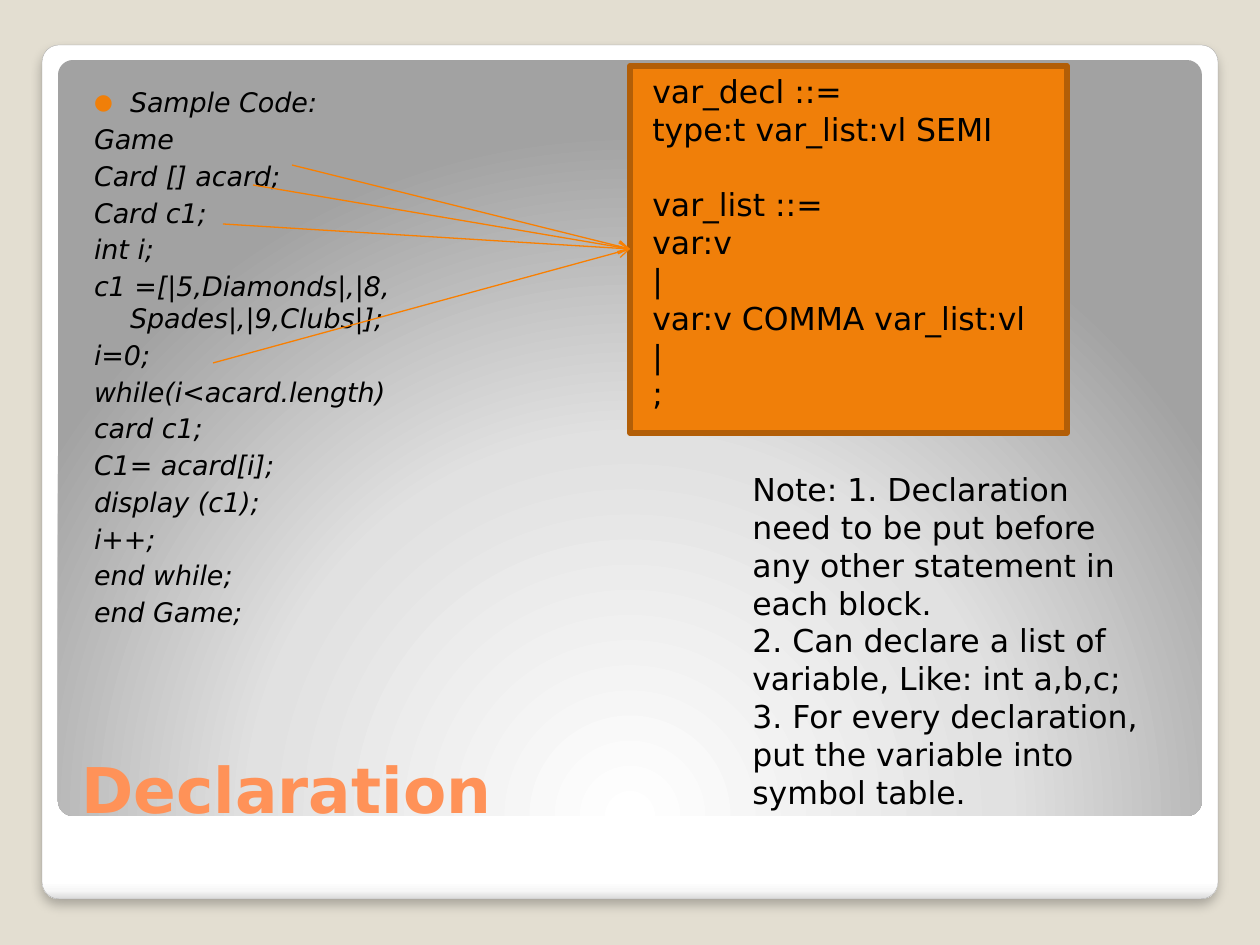
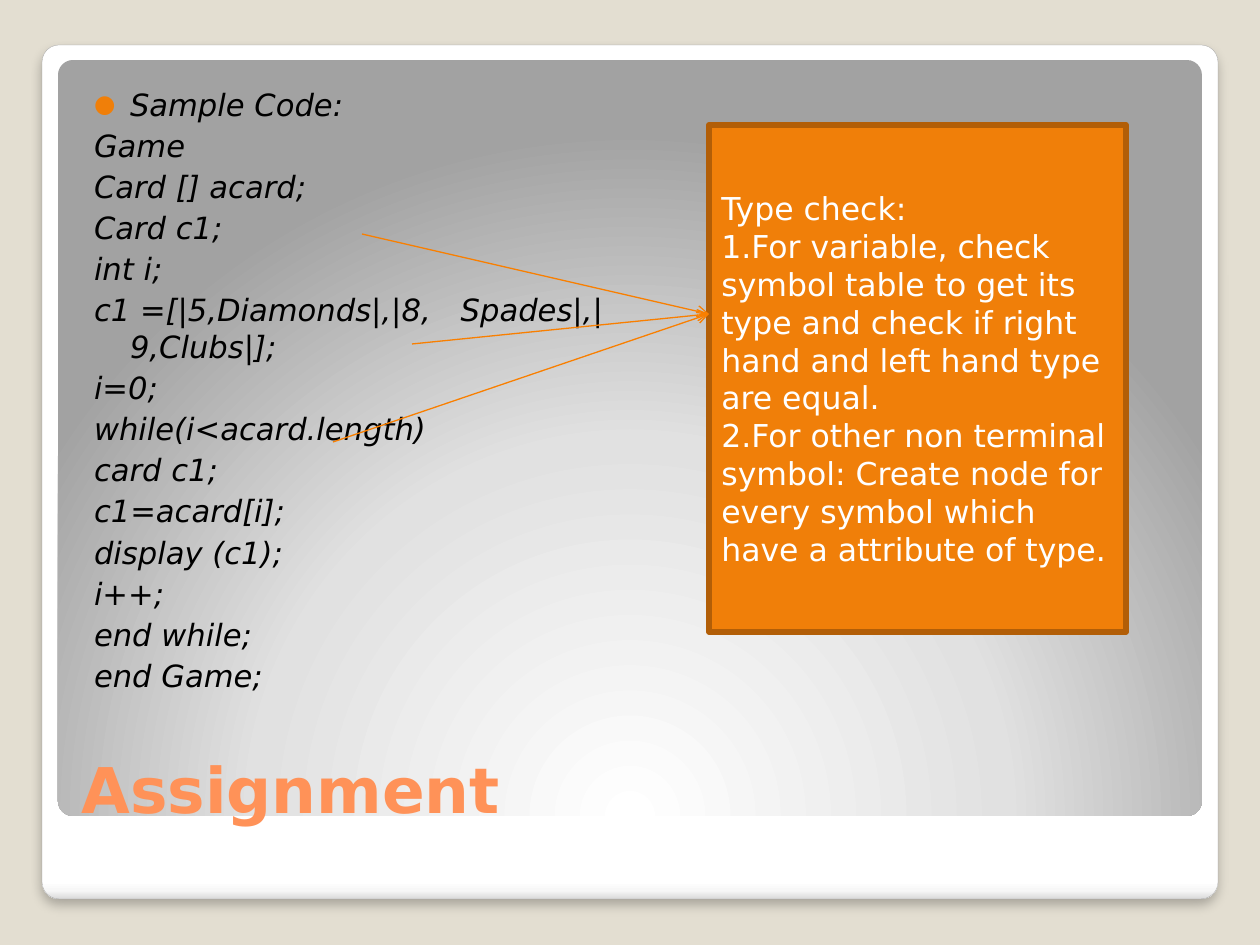
import pptx
import pptx.dml.color
import pptx.enum.shapes
import pptx.enum.text
import pptx.oxml
import pptx.oxml.ns
import pptx.util

EMU_PER_PX = 914400 / 126
FONT = "DejaVu Sans"
COLORS = {
    "background": "E3DED1",
    "plate_edge": "A4A4A4",
    "title": "FF9258",
    "text": "000000",
    "light_text": "FFFFFF",
    "box": "F07F09",
    "box_edge": "B25E07",
    "arrow": "F97F00",
}
PLATE_STOPS = [(0, "FFFFFF"), (98, "FFFFFF"), (99, "F7F7F7"), (100, "DADADA")]
PANEL_STOPS = [(0, "FFFFFF"), (55, "E1E1E1"), (100, "A2A2A2")]
DOWNWARD = '<a:lin ang="5400000" scaled="0"/>'
FROM_BELOW = ('<a:path path="circle">'
              '<a:fillToRect l="50000" t="175000" r="50000" b="-75000"/></a:path>')
SHADOW = ('<a:outerShdw {ns} blurRad="76200" dist="50800" dir="5400000" algn="tl" '
          'rotWithShape="0"><a:srgbClr val="000000"><a:alpha val="25000"/></a:srgbClr>'
          '</a:outerShdw>')
BULLET = ('<a:buClr {ns}><a:srgbClr val="' + COLORS["box"] + '"/></a:buClr>',
          '<a:buSzPct {ns} val="80000"/>',
          '<a:buFont {ns} typeface="' + FONT + '"/>',
          '<a:buChar {ns} char="●"/>')
NO_BULLET = ('<a:buNone {ns}/>',)

WIDE_GAP_AFTER = "|8,"
CODE_START = ["Sample Code:", "Game", "Card [] acard;", "Card c1;", "int i;",
              "c1 =[|5,Diamonds|,|8, Spades|,|9,Clubs|];", "i=0;",
              "while(i<acard.length)", "card c1;"]
CODE_END = ["display (c1);", "i++;", "end while;", "end Game;"]
GRAMMAR = ["var_decl ::=", "type:t var_list:vl SEMI", "var_list ::=", "var:v", "|",
           "var:v COMMA var_list:vl", "|", ";"]
NOTES = ["Note: 1. Declaration need to be put before any other statement in each block.",
         "2. Can declare a list of variable, Like: int a,b,c;",
         "3. For every declaration, put the variable into symbol table."]
TYPE_CHECK = ["Type check:",
              "1.For variable, check symbol table to get its type and check if right "
              "hand and left hand type are equal.",
              "2.For other non terminal symbol: Create node for every symbol which have "
              "a attribute of type."]


def px(length):
    return pptx.util.Emu(round(length * EMU_PER_PX))


def rgb(name):
    return pptx.dml.color.RGBColor.from_string(COLORS[name])


def xml(template):
    return pptx.oxml.parse_xml(template.format(ns=pptx.oxml.ns.nsdecls("a")))


def child(parent, tag):
    return parent.find(pptx.oxml.ns.qn(tag))


class Deck:
    def __init__(self):
        self.presentation = pptx.Presentation()
        self.presentation.slide_width = px(1260)
        self.presentation.slide_height = px(945)
        self.slide = None
        fill = self.presentation.slide_master.background.fill
        fill.solid()
        fill.fore_color.rgb = rgb("background")

    def add_slide(self, title):
        self.slide = self.presentation.slides.add_slide(self.presentation.slide_layouts[1])
        shape = self.slide.shapes.title
        self.place(shape, (69, 687, 1128, 145))
        frame = shape.text_frame
        frame.vertical_anchor = pptx.enum.text.MSO_ANCHOR.BOTTOM
        self.fill_text(frame, [title], 36, "title", bold=True)

    def place(self, shape, box):
        shape.left, shape.top, shape.width, shape.height = map(px, box)

    def style_paragraph(self, paragraph, size, color, bold=False, italic=False):
        paragraph.alignment = pptx.enum.text.PP_ALIGN.LEFT
        for run in paragraph.runs:
            font = run.font
            font.name, font.size = FONT, pptx.util.Pt(size)
            font.bold, font.italic = bold, italic
            font.color.rgb = rgb(color)

    def fill_text(self, frame, lines, size, color, **style):
        frame.word_wrap = True
        frame.auto_size = pptx.enum.text.MSO_AUTO_SIZE.NONE
        frame.text = "\n".join(lines)
        for paragraph in frame.paragraphs:
            self.style_paragraph(paragraph, size, color, **style)

    def code(self, box, lines, size):
        shape = self.slide.placeholders[1]
        self.place(shape, box)
        frame = shape.text_frame
        frame.margin_left, frame.margin_top = px(25), px(13)
        frame.margin_right, frame.margin_bottom = px(13), px(6)
        self.fill_text(frame, lines, size, "text", italic=True)
        for index, paragraph in enumerate(frame.paragraphs):
            paragraph.space_before = pptx.util.Pt(2.5)
            properties = paragraph._p.get_or_add_pPr()
            properties.set("marL", str(px(36)))
            properties.set("indent", str(px(-36)))
            for part in NO_BULLET if index else BULLET:
                properties.append(xml(part))
            if WIDE_GAP_AFTER in paragraph.text:
                self.widen_gap(paragraph, size)

    def widen_gap(self, paragraph, size):
        head, tail = paragraph.text.split(WIDE_GAP_AFTER + " ")
        paragraph.text = head + WIDE_GAP_AFTER
        gap, rest = paragraph.add_run(), paragraph.add_run()
        gap.text, rest.text = " ", tail
        self.style_paragraph(paragraph, size, "text", italic=True)
        gap._r.get_or_add_rPr().set("spc", str(round(size * 64)))

    def shape(self, kind, box):
        shape = self.slide.shapes.add_shape(kind, *map(px, box))
        shape.shadow.inherit = False
        shape.fill.solid()
        return shape

    def outline(self, shape, color, width):
        shape.line.color.rgb = rgb(color)
        shape.line.width = pptx.util.Pt(width)

    def box(self, box, lines=()):
        shape = self.shape(pptx.enum.shapes.MSO_SHAPE.RECTANGLE, box)
        shape.fill.fore_color.rgb = rgb("box")
        self.outline(shape, "box_edge", 3.35)
        if lines:
            self.fill_text(shape.text_frame, lines, 18, "light_text")
            shape.text_frame.vertical_anchor = pptx.enum.text.MSO_ANCHOR.MIDDLE

    def text(self, box, lines):
        frame = self.slide.shapes.add_textbox(*map(px, box)).text_frame
        self.fill_text(frame, lines, 18, "text")
        return frame

    def arrows(self, starts, target):
        for start in starts:
            connector = self.slide.shapes.add_connector(
                pptx.enum.shapes.MSO_CONNECTOR.STRAIGHT, *map(px, start + target))
            self.outline(connector, "arrow", 0.75)
            properties = connector.element.spPr
            child(properties, "a:ln").append(xml('<a:tailEnd {ns} type="arrow"/>'))
            properties.append(xml("<a:effectLst {ns}/>"))

    def master_panel(self, box, stops, direction, order):
        shape = self.shape(pptx.enum.shapes.MSO_SHAPE.ROUNDED_RECTANGLE, box)
        shape.adjustments[0] = 0.02
        shape.line.fill.background()
        stop_list = "".join(
            f'<a:gs pos="{position * 1000}"><a:srgbClr val="{color}"/></a:gs>'
            for position, color in stops)
        properties = shape.element.spPr
        properties.replace(
            child(properties, "a:solidFill"),
            xml(f"<a:gradFill {{ns}}><a:gsLst>{stop_list}</a:gsLst>{direction}</a:gradFill>"))
        shape.element.xpath("./p:nvSpPr/p:cNvPr")[0].set("id", str(100 + order))
        self.presentation.slide_master.shapes.element.insert(2 + order, shape.element)
        return shape

    def frame_master(self):
        plate = self.master_panel((42, 45, 1176, 854), PLATE_STOPS, DOWNWARD, 0)
        self.outline(plate, "plate_edge", 0.16)
        child(plate.element.spPr, "a:effectLst").append(xml(SHADOW))
        self.master_panel((58, 60, 1144, 756), PANEL_STOPS, FROM_BELOW, 1)


def main():
    deck = Deck()

    deck.add_slide("Declaration")
    deck.frame_master()
    deck.code((69, 73, 461, 528), CODE_START + ["C1= acard[i];"] + CODE_END, 15.4)
    deck.box((630, 66, 437, 367))
    grammar = deck.text((640, 66, 427, 432), GRAMMAR)
    grammar.paragraphs[2].space_before = pptx.util.Pt(21.5)
    deck.text((740, 464, 427, 357), NOTES)
    deck.arrows([(292, 165), (253, 185), (223, 224), (213, 363)], (630, 249))

    deck.add_slide("Assignment")
    deck.code((69, 73, 551, 577), CODE_START + ["c1=acard[i];"] + CODE_END, 17.5)
    deck.box((709, 125, 417, 507), TYPE_CHECK)
    deck.arrows([(362, 234), (412, 344), (333, 442)], (709, 314))

    deck.presentation.save("out.pptx")


if __name__ == "__main__":
    main()
